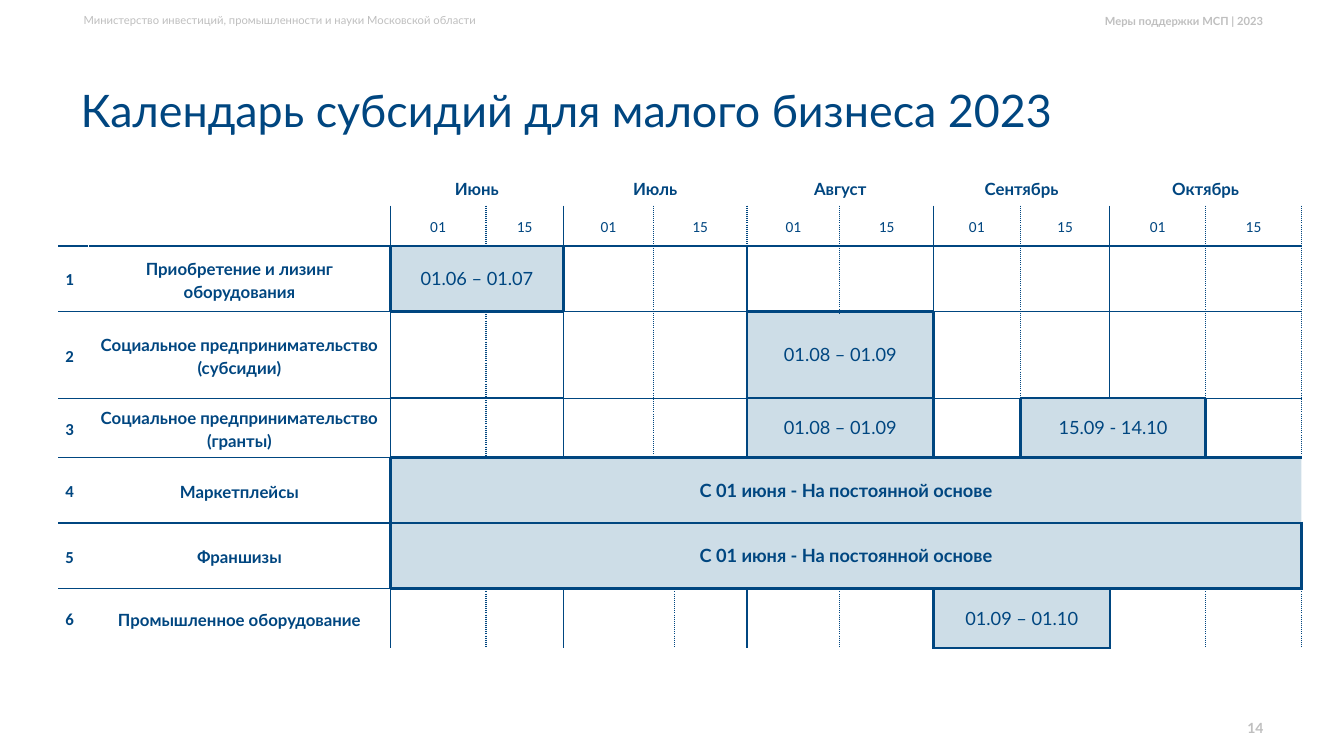
from lxml.etree import SubElement
from pptx import Presentation
from pptx.dml.color import RGBColor
from pptx.enum.text import MSO_ANCHOR, PP_ALIGN
from pptx.oxml.ns import qn
from pptx.util import Inches, Pt

NAVY = RGBColor(0x00, 0x46, 0x80)
GREY = RGBColor(0xBF, 0xBF, 0xBF)
WHITE = RGBColor(0xFF, 0xFF, 0xFF)
BAR = RGBColor(0x9D, 0xBD, 0xD1)

TITLE = "Календарь субсидий для малого бизнеса 2023"
MINISTRY = "Министерство инвестиций, промышленности и науки Московской области"
SECTION = "Меры поддержки МСП | 2023"
PAGE = "14"

MONTHS = [("Июнь", 2, 4), ("Июль", 4, 7), ("Август", 7, 9),
          ("Сентябрь", 9, 11), ("Октябрь", 11, 13)]
MEASURES = [
    "Приобретение и лизинг оборудования",
    "Социальное предпринимательство (субсидии)",
    "Социальное предпринимательство (гранты)",
    "Маркетплейсы",
    "Франшизы",
    "Промышленное оборудование",
]
BARS = [
    (2, 2, 4, "01.06 – 01.07"),
    (3, 7, 9, "01.08 – 01.09"),
    (4, 7, 9, "01.08 – 01.09"),
    (4, 10, 12, "15.09 - 14.10"),
    (5, 2, 13, "С 01 июня - На постоянной основе"),
    (6, 2, 13, "С 01 июня - На постоянной основе"),
    (7, 9, 11, "01.09 – 01.10"),
]
COLS = [0.3, 2.99, 0.95, 0.77, 0.89, 0.21, 0.72, 0.92, 0.93, 0.86, 0.89, 0.95, 0.95]
ROWS = [0.37, 0.4, 0.65, 0.86, 0.59, 0.65, 0.65, 0.59]
FIRST, LAST = 2, len(ROWS)
END = len(COLS)
DOTTED = (3, 5, 6, 8, 10, 12, END)
THIN, THICK, DOTS = (NAVY, 1, "solid"), (NAVY, 2.25, "solid"), (NAVY, 1, "sysDot")
NO_GRID = "{2D5ABB26-0587-4C30-8999-92F81FD0307C}"


def write(tf, text, size=12, font="Lato", color=NAVY, bold=False,
          align=PP_ALIGN.LEFT, spacing=None, after=None):
    p = tf.paragraphs[0]
    p.alignment = align
    if spacing:
        p.line_spacing = spacing
    if after:
        p.space_after = Pt(after)
    r = p.add_run()
    r.text = text
    r.font.size, r.font.name, r.font.bold = Pt(size), font, bold
    r.font.color.rgb = color


def add_label(s, box, text, **fmt):
    tf = s.shapes.add_textbox(*map(Inches, box)).text_frame
    tf.word_wrap = True
    tf.vertical_anchor = MSO_ANCHOR.MIDDLE
    write(tf, text, **fmt)


def vertical_line(col, row):
    if row == 0 or col == 0:
        return None
    if col == 1:
        return (WHITE, 1, "solid") if row >= FIRST else None
    if (col, row) == (END, 5):
        return None
    if any(row == b[0] and col in b[1:3] for b in BARS):
        return THICK
    if col in DOTTED or (col, row) == (7, 1):
        return DOTS
    return (NAVY, 1.5, "solid") if col == 4 else THIN


def horizontal_line(row, col):
    if any(row in (b[0], b[0] + 1) and b[1] <= col < b[2] for b in BARS):
        return THICK
    if row == 4 and col in (2, 3):
        return THICK
    return THIN if FIRST <= row < LAST else None


def set_border(tc_pr, side, line):
    if line is None:
        return
    color, width, dash = line
    ln = SubElement(tc_pr, qn("a:ln" + side), w=str(Pt(width)))
    SubElement(SubElement(ln, qn("a:solidFill")), qn("a:srgbClr"), val=str(color))
    SubElement(ln, qn("a:prstDash"), val=dash)


def build_regions():
    regions = [(0, 0, 2, 2)] + [(0, a, 1, b) for _, a, b in MONTHS]
    regions += [(row, a, row + 1, b) for row, a, b, _ in BARS]
    for row in range(1, LAST):
        pair = (4, 6) if row == 7 else (5, 7)
        if row not in (5, 6):
            regions.append((row, pair[0], row + 1, pair[1]))
    taken = {(r, c) for top, left, bottom, right in regions
             for r in range(top, bottom) for c in range(left, right)}
    return regions + [(r, c, r + 1, c + 1) for r in range(LAST)
                      for c in range(END) if (r, c) not in taken]


def add_calendar(s):
    frame = s.shapes.add_table(LAST, END, Inches(0.58), Inches(1.67),
                               Inches(sum(COLS)), Inches(sum(ROWS)))
    table = frame.table
    table.first_row = table.horz_banding = False
    frame._element.find(".//" + qn("a:tableStyleId")).text = NO_GRID
    for column, width in zip(table.columns, COLS):
        column.width = Inches(width)
    for row, height in zip(table.rows, ROWS):
        row.height = Inches(height)
    for cell in table.iter_cells():
        cell.margin_left = cell.margin_right = Inches(0.07)
        cell.margin_top = cell.margin_bottom = 0
        cell.vertical_anchor = MSO_ANCHOR.MIDDLE

    bar_starts = {b[:2] for b in BARS}
    for top, left, bottom, right in build_regions():
        cell = table.cell(top, left)
        if (bottom - top, right - left) != (1, 1):
            cell.merge(table.cell(bottom - 1, right - 1))
        tc_pr = cell._tc.get_or_add_tcPr()
        set_border(tc_pr, "L", vertical_line(left, top))
        set_border(tc_pr, "R", vertical_line(right, top))
        set_border(tc_pr, "T", horizontal_line(top, left))
        set_border(tc_pr, "B", horizontal_line(bottom, left))
        if (top, left) in bar_starts:
            cell.fill.solid()
            cell.fill.fore_color.rgb = BAR
            SubElement(tc_pr.find(qn("a:solidFill"))[0], qn("a:alpha"), val="50000")
        else:
            cell.fill.background()

    head = dict(spacing=1.15, after=10, align=PP_ALIGN.CENTER)
    for month, left, right in MONTHS:
        write(table.cell(0, left).text_frame, month, bold=True, **head)
        for day, col in (("01", left), ("15", left + 1)):
            write(table.cell(1, col).text_frame, day, size=11, font="Calibri", **head)
    for i, measure in enumerate(MEASURES):
        row = FIRST + i
        write(table.cell(row, 0).text_frame, str(i + 1), font="Calibri", bold=True,
              spacing=1.15, after=10)
        write(table.cell(row, 1).text_frame, measure, bold=True, **head)
    for row, left, right, text in BARS:
        write(table.cell(row, left).text_frame, text, size=13,
              bold=right - left > 2, align=PP_ALIGN.CENTER)


def main():
    prs = Presentation()
    prs.slide_width, prs.slide_height = Inches(13.33), Inches(7.5)
    s = prs.slides.add_slide(prs.slide_layouts[5])

    title = s.shapes.title
    title.left, title.top = Inches(0.7), Inches(0.4)
    title.width, title.height = Inches(11.94), Inches(1.45)
    title.text_frame.vertical_anchor = MSO_ANCHOR.MIDDLE
    write(title.text_frame, TITLE, size=32, spacing=0.9)

    right = dict(color=GREY, bold=True, align=PP_ALIGN.RIGHT)
    add_label(s, (0.73, 0.08, 5.65, 0.24), MINISTRY, size=8, color=GREY)
    add_label(s, (8.13, 0.12, 4.5, 0.18), SECTION, size=8, **right)
    add_label(s, (9.63, 7.1, 3, 0.25), PAGE, size=10, **right)
    add_calendar(s)
    prs.save("out.pptx")


if __name__ == "__main__":
    main()
